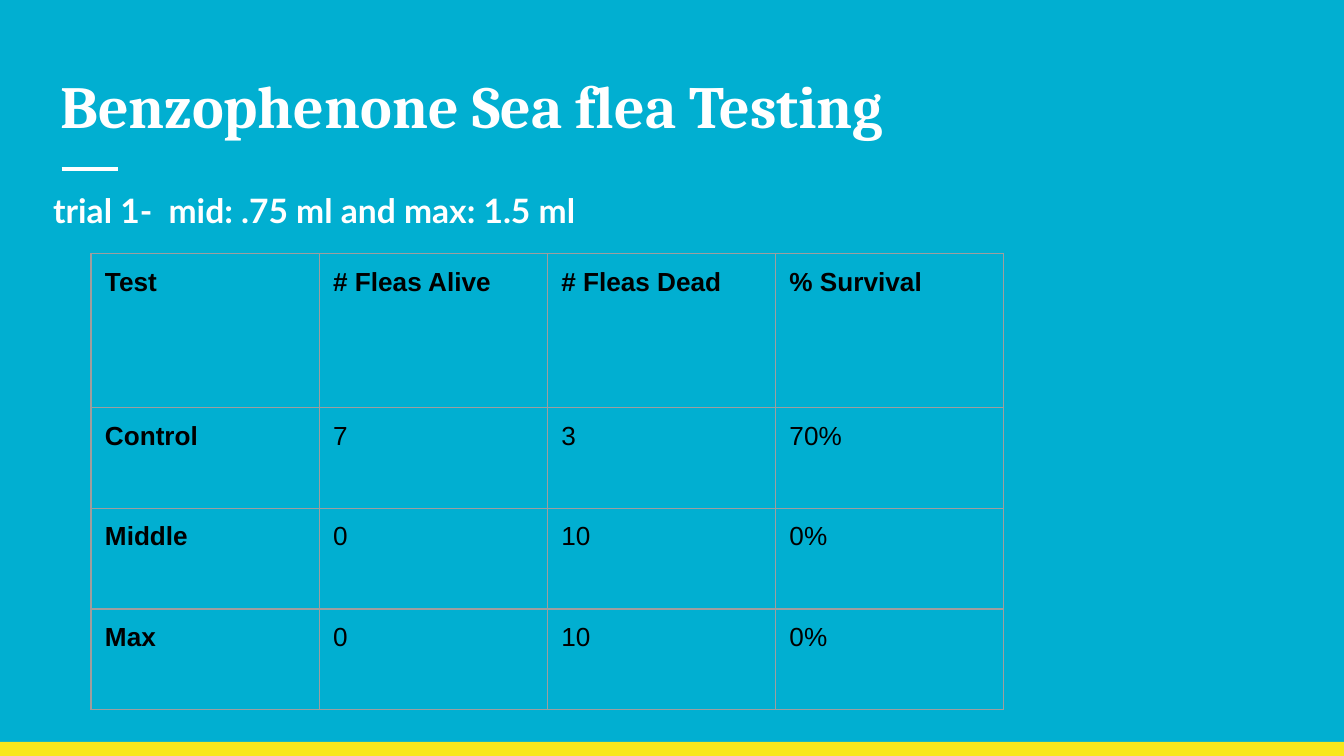
from lxml import etree
from pptx import Presentation
from pptx.dml.color import RGBColor
from pptx.enum.shapes import MSO_CONNECTOR, MSO_SHAPE
from pptx.oxml.ns import qn
from pptx.util import Pt

STRAIGHT = MSO_CONNECTOR.STRAIGHT
RECTANGLE = MSO_SHAPE.RECTANGLE

EMU_PER_PX = 9525
SLIDE_WIDTH, SLIDE_HEIGHT = 960, 540
INSET = 10

BACKGROUND = "01AFD1"
YELLOW = "F8E71C"
WHITE = "FFFFFF"
BLACK = "000000"
GRID_GREY = "9E9E9E"

ROWS = [
    ["Test", "# Fleas Alive", "# Fleas Dead", "% Survival"],
    ["Control", "7", "3", "70%"],
    ["Middle", "0", "10", "0%"],
    ["Max", "0", "10", "0%"],
]
COLUMN_WIDTH = 163
HEADER_HEIGHT, ROW_HEIGHT = 110, 72


def px(length):
    return length * EMU_PER_PX


def color(hex_string):
    return RGBColor.from_string(hex_string)


def add_run(paragraph, text, font_name, size, hex_string, bold=True):
    run = paragraph.add_run()
    run.text = text
    run.font.name = font_name
    run.font.size = Pt(size)
    run.font.bold = bold
    run.font.color.rgb = color(hex_string)


def set_insets(target):
    """Give a text frame or a table cell the same inset on all sides."""
    target.margin_left = target.margin_right = px(INSET)
    target.margin_top = target.margin_bottom = px(INSET)


def add_text_box(slide, left, top, width, height):
    """Add an empty wrapped text box and return its first paragraph."""
    box = slide.shapes.add_textbox(px(left), px(top), px(width), px(height))
    box.text_frame.word_wrap = True
    set_insets(box.text_frame)
    return box.text_frame.paragraphs[0]


def add_footer_bar(slide, left, top, width, height):
    bar = slide.shapes.add_shape(RECTANGLE, px(left), px(top), px(width), px(height))
    bar.shadow.inherit = False
    bar.fill.solid()
    bar.fill.fore_color.rgb = color(YELLOW)
    bar.line.fill.background()


def add_heading(slide, left, top, width, height):
    """Add the title and the short rule below it."""
    paragraph = add_text_box(slide, left, top, width, height)
    add_run(paragraph, "Benzophenone Sea flea Testing", "Cambria", 32, WHITE)

    rule_left, rule_top = left + 11, top + 82
    rule = slide.shapes.add_connector(
        STRAIGHT, px(rule_left), px(rule_top), px(rule_left + 40), px(rule_top))
    rule.line.color.rgb = color(WHITE)
    rule.line.width = Pt(2.25)
    etree.SubElement(rule._element.spPr, qn("a:effectLst"))


def add_trial_note(slide, left, top, width, height):
    paragraph = add_text_box(slide, left, top, width, height)
    paragraph.line_spacing = 1.15
    paragraph.space_after = Pt(16)
    add_run(paragraph, "trial 1-  mid: .75 ml and max: 1.5 ml", "Lato", 18, WHITE)


def set_borders(cell):
    properties = cell._tc.get_or_add_tcPr()
    for position, side in enumerate(("a:lnL", "a:lnR", "a:lnT", "a:lnB")):
        line = etree.Element(qn(side), w=str(Pt(0.75)))
        fill = etree.SubElement(line, qn("a:solidFill"))
        etree.SubElement(fill, qn("a:srgbClr"), val=GRID_GREY)
        properties.insert(position, line)


def add_results_table(slide, left, top):
    width = COLUMN_WIDTH * len(ROWS[0])
    height = HEADER_HEIGHT + ROW_HEIGHT * (len(ROWS) - 1)
    table = slide.shapes.add_table(
        len(ROWS), len(ROWS[0]), px(left), px(top), px(width), px(height)).table
    table.first_row = False
    table.horz_banding = False
    for column in table.columns:
        column.width = px(COLUMN_WIDTH)
    for row_index, texts in enumerate(ROWS):
        table.rows[row_index].height = px(ROW_HEIGHT if row_index else HEADER_HEIGHT)
        for column_index, text in enumerate(texts):
            cell = table.cell(row_index, column_index)
            cell.fill.background()
            set_insets(cell)
            set_borders(cell)
            is_label = row_index == 0 or column_index == 0
            add_run(cell.text_frame.paragraphs[0], text, "Arial", 14, BLACK, is_label)


def main():
    presentation = Presentation()
    presentation.slide_width = px(SLIDE_WIDTH)
    presentation.slide_height = px(SLIDE_HEIGHT)
    slide = presentation.slides.add_slide(presentation.slide_layouts[6])
    slide.background.fill.solid()
    slide.background.fill.fore_color.rgb = color(BACKGROUND)

    add_footer_bar(slide, 0, 530, SLIDE_WIDTH, 10)
    add_heading(slide, 33, 39, 895, 68)
    add_trial_note(slide, 28, 121, 895, 386)
    add_results_table(slide, 65, 181)
    presentation.save("out.pptx")


if __name__ == "__main__":
    main()
